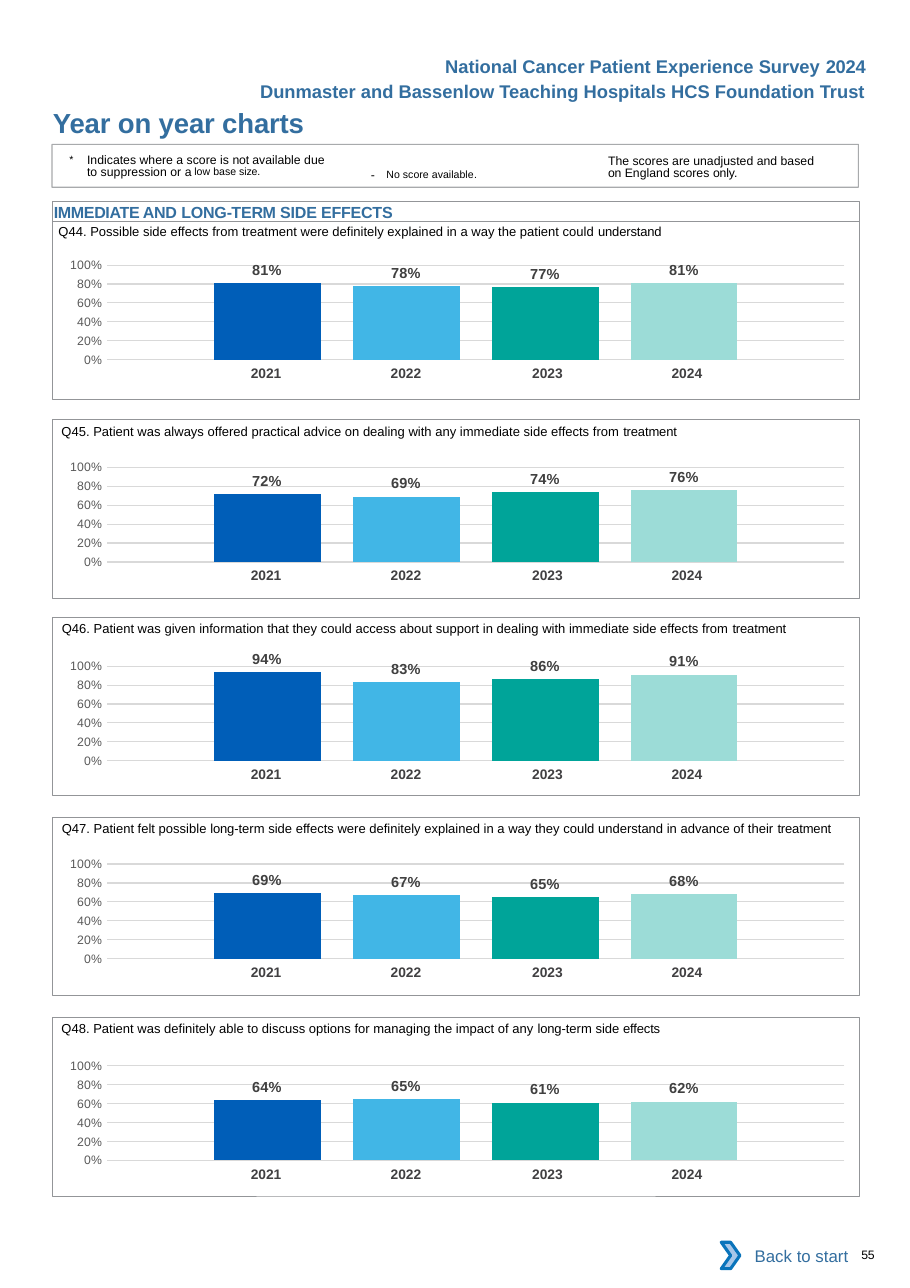
from pptx import Presentation
from pptx.chart.data import CategoryChartData as Data
from pptx.dml.color import RGBColor
from pptx.enum.chart import XL_CHART_TYPE as Kind, XL_LABEL_POSITION as Spot, XL_TICK_MARK as Tick
from pptx.enum.shapes import MSO_SHAPE as Form
from pptx.enum.text import MSO_ANCHOR as Anchor, PP_ALIGN as Align
from pptx.oxml import parse_xml
from pptx.oxml.ns import nsdecls, qn
from pptx.util import Pt

BLUE, GREY, BLACK = "336E9F", "939598", "000000"
YEARS = {"2021": "005EB8", "2022": "41B6E6", "2023": "00A499", "2024": "9CDCD7"}
PLAIN = "{2D5ABB26-0587-4C30-8999-92F81FD0307C}"
LEFT, WIDTH = 34.5, 527

PANELS = [
    (144.7, 139.7, 38.2, 159.8, (0.81, 0.78, 0.77, 0.81), [
        ("Q44. Possible side effects from treatment were definitely explained "
         "in a way the patient could ",), ("understand", -0.1)]),
    (274.3, 270, 40.2, 292, (0.72, 0.69, 0.74, 0.76), [
        ("Q45. Patient was always offered practical advice on dealing with any "
         "immediate side effects from ",), ("treatment", -0.1)]),
    (403.2, 398.9, 40.4, 421.9, (0.94, 0.83, 0.86, 0.91), [
        ("Q46. Patient was given information that they could access about support "
         "in dealing with immediate side effects from ",), ("treatment", -0.1)]),
    (534.2, 529.4, 40.4, 551.2, (0.69, 0.67, 0.65, 0.68), [
        ("Q47. Patient felt possible ",), ("long-", -0.1),
        ("term side effects were definitely explained in a way they could "
         "understand in advance of their ",), ("treatment", -0.1)]),
    (665, 660.2, 40.2, 683, (0.64, 0.65, 0.61, 0.62), [
        ("Q48. Patient was definitely able to discuss options for managing the "
         "impact of any ",), ("long-", -0.1), ("term side ",), ("effects", -0.1)]),
]


def color(code):
    """Turn a hex string into a colour."""
    return RGBColor.from_string(code)


def style(font, size, code, bold=False):
    """Set the look of a font."""
    font.name, font.size, font.bold = "Arial", Pt(size), bold
    font.color.rgb = color(code)


def write(frame, runs, size, code=BLACK, bold=False, align=Align.LEFT, pad=(0, 0, 0, 0)):
    """Write runs of (text, spacing, size, raise) as one paragraph."""
    frame.word_wrap = True
    frame.margin_left, frame.margin_top, frame.margin_right, frame.margin_bottom = map(Pt, pad)
    para = frame.paragraphs[0]
    para.alignment = align
    for words, *rest in runs:
        gap, own, lift = rest + [0, size, 0][len(rest):]
        run = para.add_run()
        run.text = words
        style(run.font, own, code, bold)
        props = run.font._element
        props.set("spc", str(round(gap * 100)))
        if lift:
            props.set("baseline", str(lift * 1000))
    return para


def label(slide, x, y, w, h, runs, size, **look):
    """Add a text box and give its paragraph."""
    return write(slide.shapes.add_textbox(Pt(x), Pt(y), Pt(w), Pt(h)).text_frame, runs, size, **look)


def shape(slide, form, x, y, w, h, fill=None, line=None, thick=0.5):
    """Add a preset shape."""
    item = slide.shapes.add_shape(form, Pt(x), Pt(y), Pt(w), Pt(h))
    item.shadow.inherit = False
    if fill:
        item.fill.solid()
        item.fill.fore_color.rgb = color(fill)
    else:
        item.fill.background()
    if line:
        item.line.color.rgb = color(line)
        item.line.width = Pt(thick)
    else:
        item.line.fill.background()
    return item


def years(slide, y):
    """Add the row of years as a table."""
    frame = slide.shapes.add_table(1, len(YEARS), Pt(124.6), Pt(y), Pt(370.8), Pt(19.4))
    table = frame.table
    table.first_row = table.horz_banding = False
    table._tbl.tblPr[0].text = PLAIN
    for i, (year, wide, right) in enumerate(zip(YEARS, (91.4, 91.4, 96.5, 91.4), (0, 0, 2.9, 8.6))):
        table.columns[i].width = Pt(wide)
        cell = table.cell(0, i)
        cell.fill.background()
        write(cell.text_frame, [(year,)], 9, "414042", True, Align.CENTER)
        cell.margin_left, cell.margin_right = Pt(7.2), Pt(right)
        cell.margin_top = cell.margin_bottom = Pt(3.6)


def layout(chart):
    """Fix the inner plot area."""
    plot = chart._chartSpace.chart.plotArea
    for old in plot.findall(qn("c:layout")):
        plot.remove(old)
    sizes = {"x": 0.079, "y": 0.145, "w": 0.915, "h": 0.666}
    modes = '<c:xMode val="edge"/><c:yMode val="edge"/>'
    marks = "".join(f'<c:{key} val="{val}"/>' for key, val in sizes.items())
    plot.insert(0, parse_xml(
        f'<c:layout {nsdecls("c")}><c:manualLayout><c:layoutTarget val="inner"/>'
        f'{modes}{marks}</c:manualLayout></c:layout>'))


def bars(slide, y, scores):
    """Add the column chart of yearly scores."""
    data = Data(number_format="0%")
    data.categories = ["1"]
    for i, score in enumerate(scores, 1):
        data.add_series(f"Series {i}", [score])
    chart = slide.shapes.add_chart(
        Kind.COLUMN_CLUSTERED, Pt(28.1), Pt(y), Pt(WIDTH), Pt(92.9), data).chart
    chart.has_legend = chart.has_title = False
    chart.font.name, chart.font.size = "Calibri", Pt(10)
    chart.font.color.rgb = color(BLACK)
    layout(chart)
    chart.category_axis.visible = False
    axis = chart.value_axis
    axis.minimum_scale, axis.maximum_scale, axis.major_unit = 0, 1, 0.2
    axis.major_tick_mark = axis.minor_tick_mark = Tick.NONE
    axis.format.line.fill.background()
    grid = axis.major_gridlines.format.line
    grid.color.rgb, grid.width = color("D9D9D9"), Pt(0.75)
    style(axis.tick_labels.font, 8, "595959")
    axis.tick_labels.number_format = "0%"
    axis.tick_labels.number_format_is_linked = False
    plot = chart.plots[0]
    plot.gap_width, plot.overlap, plot.vary_by_categories = 200, -30, False
    for series, code in zip(plot.series, YEARS.values()):
        series.format.fill.solid()
        series.format.fill.fore_color.rgb = color(code)
        tags = series.data_labels
        tags.show_value, tags.position = True, Spot.OUTSIDE_END
        tags.number_format, tags.number_format_is_linked = "0%", False
        style(tags.font, 9.5, "404040", True)


def panel(slide, top, head, left, plot, scores, runs):
    """Add one question with its chart, years and frame."""
    label(slide, left, head, 523, 17.3, runs, 8.5, pad=(0, 6.5, 0, 0))
    years(slide, plot + 75.8)
    bars(slide, plot, scores)
    shape(slide, Form.RECTANGLE, LEFT, top, WIDTH, 116.6, line=GREY)


def notes(slide):
    """Add the framed key to the scores."""
    frame = shape(slide, Form.RECTANGLE, LEFT - 0.5, 94.3, WIDTH, 28.1, line=GREY, thick=0.75)
    tint = frame.line._ln.find(".//" + qn("a:srgbClr"))
    tint.append(parse_xml(f'<a:alpha {nsdecls("a")} val="80000"/>'))
    star = label(slide, 45.4, 99.4, 170, 20, [
        ("*\t", 0, 12, 3), ("Indicates where a score is ",), ("not ", -0.2),
        ("available due to suppression or ",), ("a ", -0.5),
        ("low base", 0, 12, 7), (" size.", -0.1, 12, 7)], 8, pad=(0, 2.2, 0, 0))
    props = star._p.get_or_add_pPr()
    props.set("marL", str(Pt(11.5)))
    props.set("indent", str(Pt(-11.5)))
    label(slide, 235.4, 101.5, 131.8, 17.3, [
        ("- ", 2.6), ("No score available", 0, 12, 3), (".", -0.1, 12, 3)], 8,
        pad=(7.2, 3.6, 7.2, 3.6))
    basis = label(slide, 397.4, 99.4, 140, 20, [
        ("The scores are unadjusted and based",), (" on", -0.2),
        (" England scores ",), ("only.", -0.1)], 8, pad=(0, 2.2, 0, 0))
    star.line_spacing = basis.line_spacing = Pt(8.1)


def main():
    """Build the page."""
    deck = Presentation()
    deck.slide_width, deck.slide_height = Pt(594.72), Pt(841.68)
    slide = deck.slides.add_slide(deck.slide_layouts[6])
    survey = [("National Cancer Patient Experience Survey ",), ("2024", -0.2)]
    trust = [("Dunmaster and Bassenlow Teaching Hospitals HCS Foundation Trust",)]
    for y, runs in ((32.8, survey), (49, trust)):
        label(slide, 160.9, y, 412, 21.6, runs, 12, code=BLUE, bold=True,
              align=Align.RIGHT, pad=(7.2, 3.6, 7.2, 3.6))
    label(slide, 34.6, 69.1, 324, 21.6, [("Year on year charts", -0.1)], 18, code=BLUE, bold=True)
    notes(slide)
    band = shape(slide, Form.RECTANGLE, LEFT, 131.8, WIDTH, 13, line=GREY).text_frame
    band.vertical_anchor = Anchor.TOP
    write(band, [("IMMEDIATE AND ", -0.2), ("LONG", -0.1), ("-T", -0.5), ("ERM ", -0.2),
                 ("SIDE EFFECTS", -0.1)], 10.5, BLUE, True, pad=(0.7, 0.7, 0, 0))
    for item in PANELS:
        panel(slide, *item)
    back = shape(slide, Form.RECTANGLE, 476.6, 805.4, 85, 30.2, fill="FFFFFF").text_frame
    back.vertical_anchor = Anchor.MIDDLE
    write(back, [("Back to start",)], 11, BLUE, align=Align.RIGHT, pad=(7.2, 3.6, 7.2, 3.6))
    shape(slide, Form.CHEVRON, 471.4, 811.8, 12.2, 17.3, "A8C7E9", "0A74BB", 2)
    label(slide, 563, 815.4, 29.5, 9.4, [("55", -0.2)], 8)
    deck.save("out.pptx")


if __name__ == "__main__":
    main()
